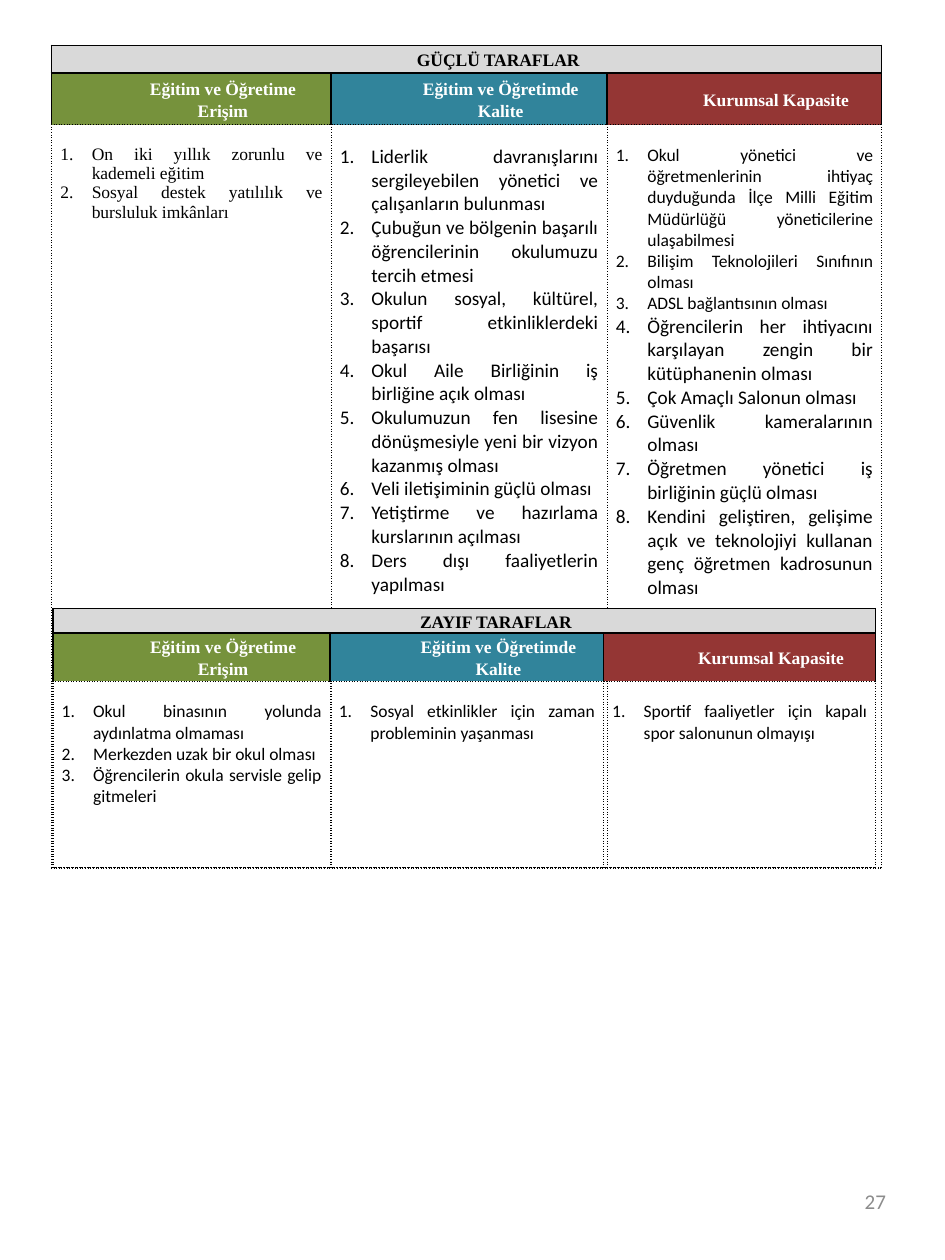
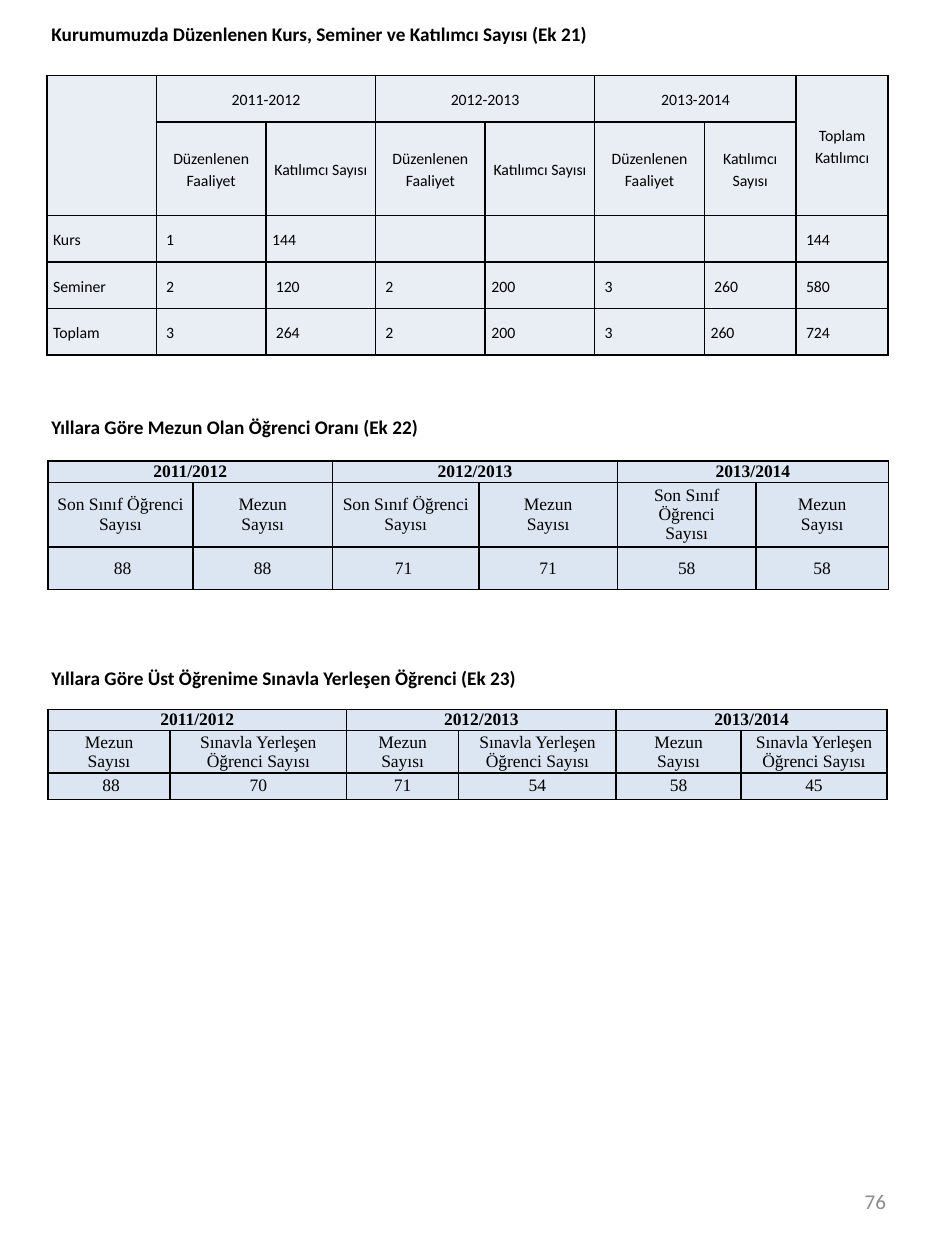
import pptx
import pptx.util
import pptx.dml.color
import pptx.enum.text
import pptx.oxml.ns
import lxml.etree as etree

prs = pptx.Presentation()
prs.slide_width = pptx.util.Inches(7.5)
prs.slide_height = pptx.util.Inches(10)
COL = prs.slide_width / 100
ROW = prs.slide_height / 100

rgb = pptx.dml.color.RGBColor.from_string
qn = pptx.oxml.ns.qn
Pt = pptx.util.Pt
ALIGN = pptx.enum.text.PP_ALIGN
MIDDLE = pptx.enum.text.MSO_ANCHOR.MIDDLE
SANS, SERIF = "Calibri", "Times New Roman"
BLACK, WHITE, GREY = "000000", "FFFFFF", "8C8C8C"
TITLE_BAND, PALE_LILAC, PALE_BLUE = "D9D9D9", "E9EDF4", "DCE6F2"
AREA_FILLS = ["76923C", "31849B", "943634"]


def write(frame, lines, size, font=SANS, color=BLACK, bold=False, align=ALIGN.LEFT,
          spacing=None, before=None, indent=0, numbered=False):
    """Fill a text frame; size is one number or one number per line."""
    frame.text = "\n".join(lines)
    frame.word_wrap = True
    sizes = size if isinstance(size, list) else [size] * len(lines)
    for para, points in zip(frame.paragraphs, sizes):
        para.alignment = align
        para.line_spacing = spacing
        para.space_before = before
        props = para._p.get_or_add_pPr()
        props.set("marL", str(pptx.util.Inches(indent)))
        if numbered:
            props.set("indent", str(-pptx.util.Inches(indent)))
            etree.SubElement(props, qn("a:buFont")).set("typeface", "+mj-lt")
            etree.SubElement(props, qn("a:buAutoNum")).set("type", "arabicPeriod")
        for run in para.runs:
            run.font.size = Pt(points)
            run.font.name = font
            run.font.bold = bold
            run.font.color.rgb = rgb(color)


def add_grid(slide, left, top, widths, heights, fills, margin):
    """Add a table; cells without a fill get dotted edges."""
    table = slide.shapes.add_table(
        len(heights), len(widths), int(left * COL), int(top * ROW),
        int(sum(widths) * COL), int(sum(heights) * ROW)).table
    table.first_row = table.horz_banding = False
    for column, width in zip(table.columns, widths):
        column.width = int(width * COL)
    for r, height in enumerate(heights):
        table.rows[r].height = int(height * ROW)
        for c in range(len(widths)):
            cell = table.cell(r, c)
            cell.margin_left = cell.margin_right = pptx.util.Inches(margin)
            cell.margin_top = cell.margin_bottom = 0
            below = fills[min(r + 1, len(fills) - 1)][c]
            for side in "LRTB":
                dotted = not fills[r][c] or (side == "B" and not below)
                edge = etree.SubElement(cell._tc.get_or_add_tcPr(), qn("a:ln" + side))
                edge.set("w", str(Pt(0.75 if dotted else 1)))
                paint = etree.SubElement(edge, qn("a:solidFill"))
                etree.SubElement(paint, qn("a:srgbClr")).set("val", BLACK)
                etree.SubElement(edge, qn("a:prstDash")).set(
                    "val", "sysDot" if dotted else "solid")
            if fills[r][c]:
                cell.vertical_anchor = MIDDLE
                cell.fill.solid()
                cell.fill.fore_color.rgb = rgb(fills[r][c])
            else:
                cell.fill.background()
            # Keeps empty cells from stretching their row
            end = etree.SubElement(cell.text_frame.paragraphs[0]._p, qn("a:endParaRPr"))
            end.set("sz", "900")
    return table


# Both pages with their numbers
swot_page, tables_page = [prs.slides.add_slide(prs.slide_layouts[6]) for _ in range(2)]
for page, number in [(swot_page, "27"), (tables_page, "76")]:
    footer = page.shapes.add_textbox(int(71.73 * COL), int(92.7 * ROW),
                                     int(23.33 * COL), int(5.3 * ROW))
    write(footer.text_frame, [number], 12, color=GREY, align=ALIGN.RIGHT)
    footer.text_frame.vertical_anchor = MIDDLE

# Page 27: strengths and weaknesses
areas = ["Eğitim ve Öğretime Erişim", "Eğitim ve Öğretimde Kalite", "Kurumsal Kapasite"]
strengths = [
    (SERIF, 10, [
        "On iki yıllık zorunlu ve kademeli eğitim",
        "Sosyal destek yatılılık ve bursluluk imkânları"]),
    (SANS, 11, [
        "Liderlik davranışlarını sergileyebilen yönetici ve çalışanların bulunması",
        "Çubuğun ve bölgenin başarılı öğrencilerinin okulumuzu tercih etmesi",
        "Okulun sosyal, kültürel, sportif etkinliklerdeki başarısı",
        "Okul Aile Birliğinin iş birliğine açık olması",
        "Okulumuzun fen lisesine dönüşmesiyle yeni bir vizyon kazanmış olması",
        "Veli iletişiminin güçlü olması",
        "Yetiştirme ve hazırlama kurslarının açılması",
        "Ders dışı faaliyetlerin yapılması"]),
    (SANS, [10] * 3 + [11] * 5, [
        "Okul yönetici ve öğretmenlerinin ihtiyaç duyduğunda İlçe Milli Eğitim "
        "Müdürlüğü yöneticilerine ulaşabilmesi",
        "Bilişim Teknolojileri Sınıfının olması",
        "ADSL bağlantısının olması",
        "Öğrencilerin her ihtiyacını karşılayan zengin bir kütüphanenin olması",
        "Çok Amaçlı Salonun olması",
        "Güvenlik kameralarının olması",
        "Öğretmen yönetici iş birliğinin güçlü olması",
        "Kendini geliştiren, gelişime açık ve teknolojiyi kullanan genç öğretmen "
        "kadrosunun olması"]),
]
weaknesses = [
    (SANS, 10, [
        "Okul binasının yolunda aydınlatma olmaması",
        "Merkezden uzak bir okul olması",
        "Öğrencilerin okula servisle gelip gitmeleri"]),
    (SANS, 10, ["Sosyal etkinlikler için zaman probleminin yaşanması"]),
    (SANS, 10, ["Sportif faaliyetler için kapalı spor salonunun olmayışı"]),
]
sides = [
    ("GÜÇLÜ TARAFLAR", strengths, 5.45, 3.6, [29.6, 29.2, 29.07], [2.2, 4.1, 59]),
    ("ZAYIF TARAFLAR", weaknesses, 5.6, 48.3, [29.33, 28.93, 28.8], [1.8, 3.7, 14.8]),
]
heading = dict(size=10, font=SERIF, bold=True, align=ALIGN.CENTER,
               spacing=1.15, before=Pt(6), indent=0.5)
for title, columns, left, top, widths, heights in sides:
    grid = add_grid(swot_page, left, top, widths, heights,
                    [[TITLE_BAND] * 3, AREA_FILLS, [None] * 3], 0.07)
    grid.cell(0, 0).merge(grid.cell(0, 2))
    write(grid.cell(0, 0).text_frame, [title], **heading)
    for c, (font, size, items) in enumerate(columns):
        write(grid.cell(1, c).text_frame, [areas[c]], color=WHITE, **heading)
        body = grid.cell(2, c)
        body.margin_top = pptx.util.Inches(0.16)
        write(body.text_frame, items, size, font, align=ALIGN.JUSTIFY,
              indent=0.25, numbered=True)

# Page 76: section titles
sections = [
    (1.3, "Kurumumuzda Düzenlenen Kurs, Seminer ve Katılımcı Sayısı (Ek 21)"),
    (32.5, "Yıllara Göre Mezun Olan Öğrenci Oranı (Ek 22)"),
    (52.4, "Yıllara Göre Üst Öğrenime Sınavla Yerleşen Öğrenci (Ek 23)"),
]
for top, title in sections:
    box = page.shapes.add_textbox(int(4.13 * COL), int(top * ROW),
                                  int(89.5 * COL), int(2.9 * ROW))
    write(box.text_frame, [title], 11, bold=True)

# Page 76: courses and seminars
activity, attendance = "Düzenlenen Faaliyet", "Katılımcı Sayısı"
course_rows = [
    ["", "2011-2012", "", "2012-2013", "", "2013-2014", "", "Toplam Katılımcı"],
    [""] + [activity, attendance] * 3 + [""],
    ["Kurs", " 1", "144", "", "", "", "", " 144"],
    ["Seminer", " 2", " 120", " 2", "200", " 3", " 260", " 580"],
    ["Toplam", " 3", " 264", " 2", "200", " 3", "260", " 724"],
]
courses = add_grid(tables_page, 4.95, 6, [11.6] * 6 + [9.73] * 2,
                   [3.7, 7.4, 3.7, 3.7, 3.7], [[PALE_LILAC] * 8] * 5, 0.05)
courses.columns[5].width = int(11.6 * COL)
for c in (0, 7):
    courses.cell(0, c).merge(courses.cell(1, c))
for c in (1, 3, 5):
    courses.cell(0, c).merge(courses.cell(0, c + 1))
for r, values in enumerate(course_rows):
    for c, value in enumerate(values):
        if value:
            write(courses.cell(r, c).text_frame, [value], 9, spacing=1.15,
                  align=ALIGN.CENTER if r < 2 else ALIGN.LEFT)

# Page 76: graduates and exam placements by year
years = ["2011/2012", "2012/2013", "2013/2014"]
graduates = ["Mezun", "Sayısı"]
by_year = [
    (36.6, [15.33, 14.8, 15.47, 14.67, 14.67, 14], [1.7, 5.1, 3.4],
     [["Son Sınıf Öğrenci", "Sayısı"], graduates],
     [" 88", "88", "71 ", "71", "58", "58"]),
    (56.3, [12.93, 18.67, 11.87, 16.67, 13.2, 15.47], [1.7, 3.3, 2.1],
     [graduates, ["Sınavla Yerleşen Öğrenci Sayısı"]],
     [" 88", "70", "71", "54", "58", "45"]),
]
for top, widths, heights, measures, counts in by_year:
    grid = add_grid(tables_page, 5.07, top, widths, heights, [[PALE_BLUE] * 6] * 3, 0.07)
    for y, year in enumerate(years):
        grid.cell(0, 2 * y).merge(grid.cell(0, 2 * y + 1))
        write(grid.cell(0, 2 * y).text_frame, [year], 10, SERIF, bold=True,
              align=ALIGN.CENTER)
    for c, count in enumerate(counts):
        for r, lines in [(1, measures[c % 2]), (2, [count])]:
            write(grid.cell(r, c).text_frame, lines, 10, SERIF, align=ALIGN.CENTER)

prs.save("out.pptx")
